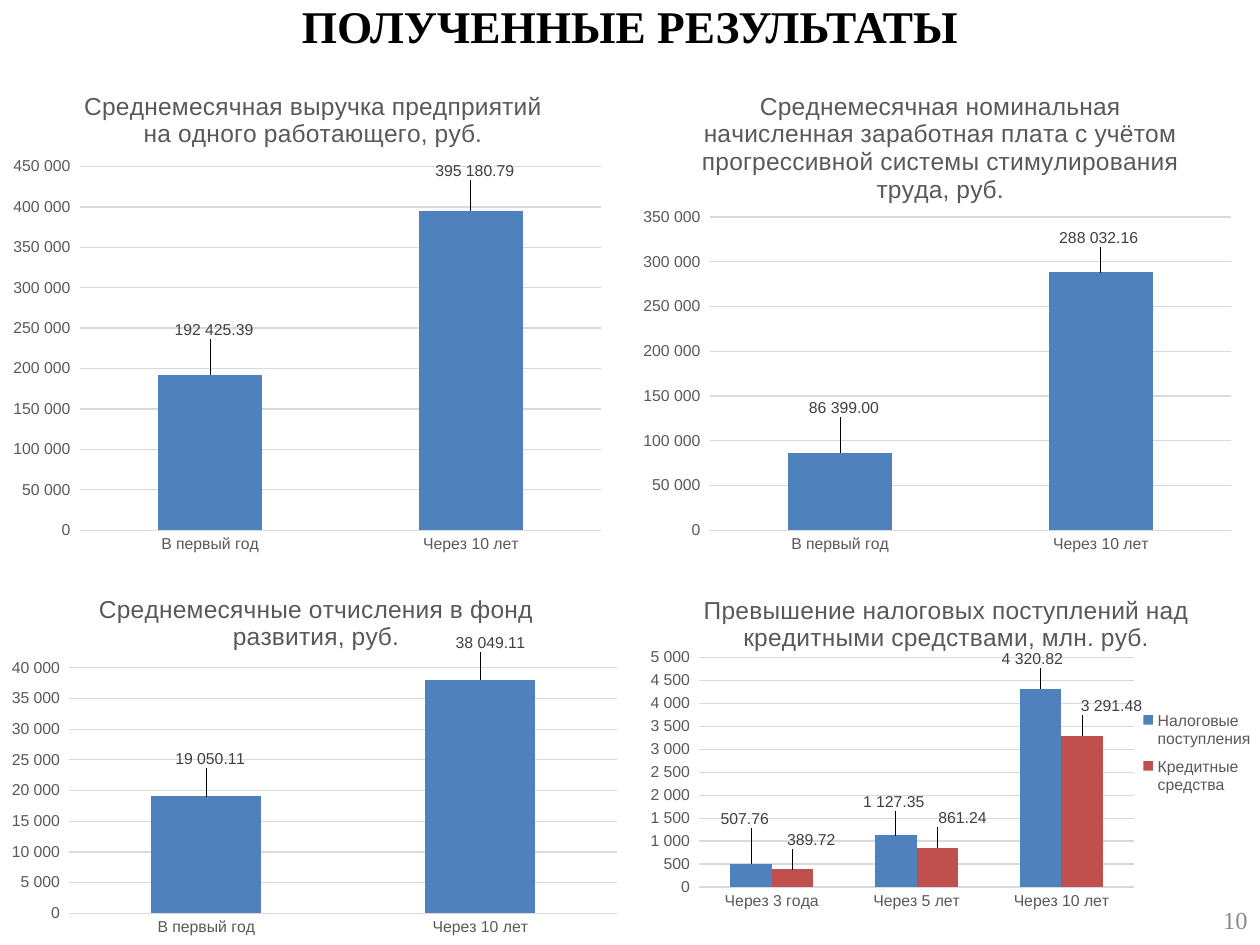
import copy
import pptx
import pptx.chart.data
import pptx.dml.color
import pptx.enum.chart
import pptx.enum.text
import pptx.oxml
import pptx.oxml.ns
import pptx.util

Inches = pptx.util.Inches
Pt = pptx.util.Pt
qn = pptx.oxml.ns.qn
WHOLE = r"#\ ##0_ ;[Red]\-#\ ##0\ "
CENTS = r"#\ ##0.00_ ;[Red]\-#\ ##0.00\ "
FILLS = ["4F81BD", "C0504D"]
YEARS = ["В первый год", "Через 10 лет"]


def color(text):
    return pptx.dml.color.RGBColor.from_string(text)


def style(font, size, fill, name="Arial", bold=False):
    font.size = Pt(size)
    font.name = name
    font.bold = bold
    font.color.rgb = color(fill)


def layout(inner=False, **parts):
    """Make a manual chart layout from fractions of the chart."""
    node = pptx.oxml.parse_xml(
        '<c:layout xmlns:c="http://schemas.openxmlformats.org/'
        'drawingml/2006/chart"><c:manualLayout/></c:layout>')
    rules = {"layoutTarget": "inner"} if inner else {}
    if "w" in parts:
        rules.update(xMode="edge", yMode="edge")
    for key, val in {**rules, **parts}.items():
        item = node[0].makeelement(qn("c:" + key), {"val": str(val)})
        node[0].append(item)
    return node


def place(owner, node, after=None):
    """Give a chart part its layout, in schema order."""
    for old in owner.findall(qn("c:layout")):
        owner.remove(old)
    if after is None:
        owner.insert(0, node)
    else:
        owner.find(qn(after)).addnext(node)


def add_text(slide, box, text, align, size, fill, bold=False, space=1.0):
    frame = slide.shapes.add_textbox(*map(Inches, box)).text_frame
    frame.word_wrap = True
    frame.vertical_anchor = pptx.enum.text.MSO_ANCHOR.MIDDLE
    line = frame.paragraphs[0]
    line.text = text
    line.alignment = align
    line.line_spacing = space
    style(line.font, size, fill, "Times New Roman", bold)


def set_title(chart, text, spot):
    frame = chart.chart_title.text_frame
    frame.text = text
    style(frame.paragraphs[0].font, 14, "595959")
    node = layout(xMode="edge", yMode="edge", x=spot[0], y=spot[1])
    place(chart.chart_title._element, node, "c:tx")


def set_axes(chart, top, step):
    for axis in (chart.category_axis, chart.value_axis):
        axis.major_tick_mark = pptx.enum.chart.XL_TICK_MARK.NONE
        axis.minor_tick_mark = pptx.enum.chart.XL_TICK_MARK.NONE
        axis.format.line.fill.background()
        style(axis.tick_labels.font, 9, "595959")
    axis = chart.value_axis
    axis.minimum_scale, axis.maximum_scale, axis.major_unit = 0, top, step
    axis.tick_labels.number_format = WHOLE
    axis.tick_labels.number_format_is_linked = False
    grid = axis.major_gridlines.format.line
    grid.color.rgb = color("D9D9D9")
    grid.width = Pt(0.75)


def set_labels(series, shifts):
    """Label each bar, moved from its end by the given shift."""
    labels = series.data_labels
    labels.show_value = True
    labels.number_format = CENTS
    labels.number_format_is_linked = False
    style(labels.font, 9, "404040")
    form = labels._element.find(qn("c:numFmt"))
    for i in range(len(shifts)):
        label = series.points[i].data_label
        style(label.font, 9, "404040")
        label.position = pptx.enum.chart.XL_LABEL_POSITION.OUTSIDE_END
    for node, (x, y) in zip(labels._element.findall(qn("c:dLbl")), shifts):
        place(node, layout(x=x, y=y), "c:idx")
        node.find(qn("c:layout")).addnext(copy.deepcopy(form))


def add_bars(slide, box, title, spot, cats, rows, plot, top, step):
    """Add one column chart; rows hold name, values and label shifts."""
    data = pptx.chart.data.CategoryChartData()
    data.categories = cats
    for name, vals, _ in rows:
        data.add_series(name, vals)
    kind = pptx.enum.chart.XL_CHART_TYPE.COLUMN_CLUSTERED
    chart = slide.shapes.add_chart(kind, *map(Inches, box), data).chart
    style(chart.font, 10, "000000")
    set_title(chart, title, spot)
    set_axes(chart, top, step)
    bars = chart.plots[0]
    bars.gap_width = 150
    bars.overlap = 0
    bars.vary_by_categories = False
    for series, row, fill in zip(bars.series, rows, FILLS):
        series.format.fill.solid()
        series.format.fill.fore_color.rgb = color(fill)
        set_labels(series, row[2])
    area = chart._chartSpace.chart.plotArea
    place(area, layout(True, **dict(zip("xywh", plot))))
    chart.has_legend = len(rows) > 1
    if chart.has_legend:
        legend = chart.legend
        legend.position = pptx.enum.chart.XL_LEGEND_POSITION.RIGHT
        legend.include_in_layout = False
        style(legend.font, 9, "595959")
        place(legend._element, layout(x=0.8, y=0.36, w=0.2, h=0.27),
              "c:legendPos")


def main():
    deck = pptx.Presentation()
    deck.slide_width, deck.slide_height = Inches(10), Inches(7.5)
    slide = deck.slides.add_slide(deck.slide_layouts[6])
    align = pptx.enum.text.PP_ALIGN

    # Heading and page number
    add_text(slide, (0, 0, 10, 0.48), "ПОЛУЧЕННЫЕ РЕЗУЛЬТАТЫ",
             align.CENTER, 25.9, "000000", True, 0.8)
    add_text(slide, (9.45, 7.1, 0.55, 0.4), "10", align.RIGHT, 14, "8B8B8B")

    # Revenue
    add_bars(slide, (0, 0.48, 4.87, 4.01),
             "Среднемесячная выручка предприятий на одного работающего, руб.",
             (0.13, 0.05), YEARS,
             [("Выручка", (192425.39, 395180.79),
               [(0.01, -0.06), (0.01, -0.05)])],
             (0.13, 0.21, 0.85, 0.72), 450000, 50000)
    # Wages
    add_bars(slide, (5, 0.48, 4.87, 4.01),
             "Среднемесячная номинальная начисленная заработная плата "
             "с учётом прогрессивной системы стимулирования труда, руб.",
             (0.11, 0.05), YEARS,
             [("Зарплата", (86399, 288032.16),
               [(0.01, -0.06), (0, -0.04)])],
             (0.13, 0.31, 0.85, 0.62), 350000, 50000)
    # Development fund
    add_bars(slide, (0, 4.49, 5, 3),
             "Среднемесячные отчисления в фонд развития, руб.",
             (0.15, 0.06), YEARS,
             [("Отчисления", (19050.11, 38049.11),
               [(0.01, -0.06), (0.02, -0.06)])],
             (0.11, 0.27, 0.87, 0.65), 40000, 5000)
    # Taxes against loans
    add_bars(slide, (5, 4.5, 5, 2.99),
             "Превышение налоговых поступлений над кредитными средствами, "
             "млн. руб.", (0.11, 0.06),
             ["Через 3 года", "Через 5 лет", "Через 10 лет"],
             [("Налоговые поступления", (507.76, 1127.35, 4320.82),
               [(-0.01, -0.08), (0, -0.05), (-0.01, -0.04)]),
              ("Кредитные средства", (389.72, 861.24, 3291.48),
               [(0.03, -0.04), (0.04, -0.04), (0.05, -0.04)])],
             (0.11, 0.24, 0.69, 0.61), 5000, 500)
    deck.save("out.pptx")


if __name__ == "__main__":
    main()
